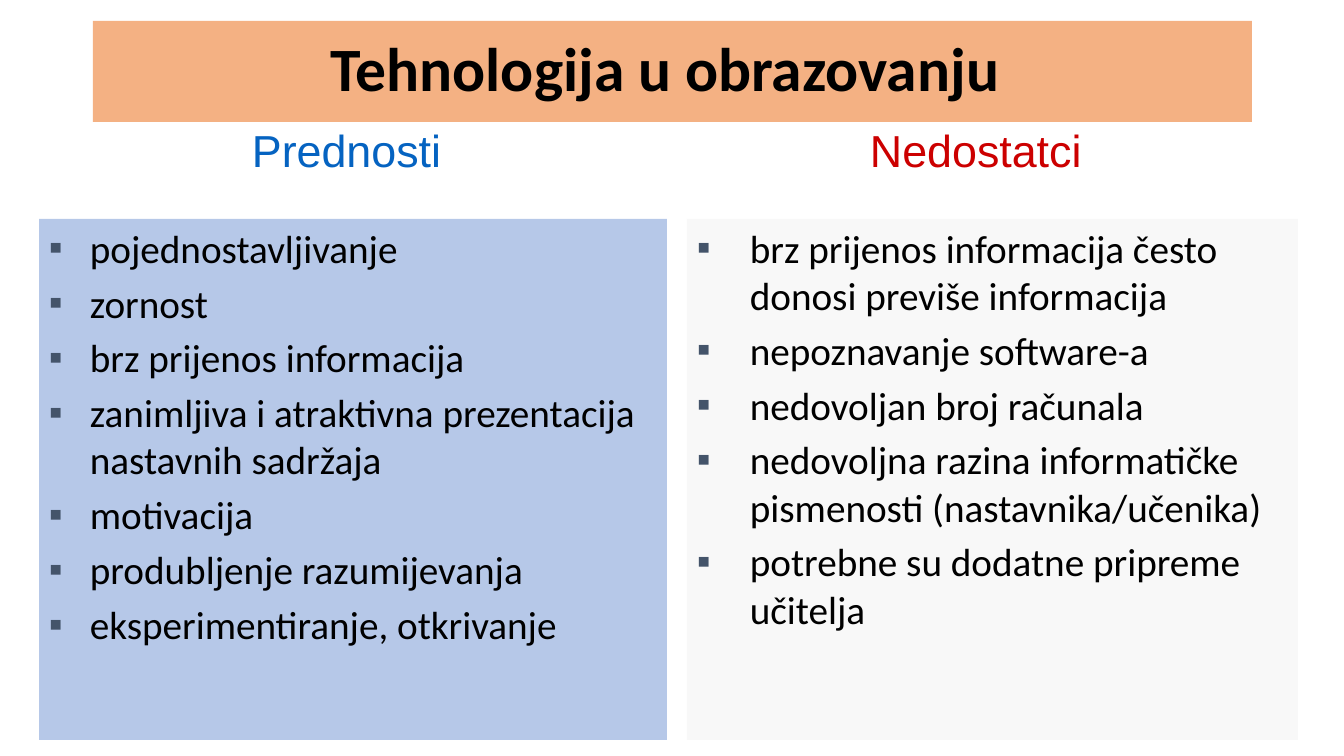
import pptx
import pptx.util
import pptx.dml.color
import pptx.enum.shapes
import pptx.enum.text
import pptx.oxml
import pptx.oxml.ns
import lxml.etree

RGB = pptx.dml.color.RGBColor
BLACK = RGB(0x00, 0x00, 0x00)
BLUE = RGB(0x44, 0x72, 0xC4)
PALE = RGB(0xF8, 0xF8, 0xF8)
PEACH = RGB(0xF4, 0xB1, 0x83)
LINK = RGB(0x05, 0x63, 0xC1)
RED = RGB(0xCC, 0x00, 0x00)
SLATE = RGB(0x44, 0x54, 0x6A)

# Content: boxes are left, top, width, height in px
TITLE = ("Tehnologija u obrazovanju ", (93, 21, 1159, 101))
SIDES = [
    dict(head="Prednosti", color=LINK, label=(242, 118, 213, 65),
         box=(39, 219, 628, 521), fill=BLUE, alpha=39, indent=41,
         items=["pojednostavljivanje",
                "zornost",
                "brz prijenos informacija",
                "zanimljiva i atraktivna prezentacija nastavnih sadržaja",
                "motivacija",
                "produbljenje razumijevanja",
                "eksperimentiranje, otkrivanje"]),
    dict(head="Nedostatci", color=RED, label=(860, 118, 268, 65),
         box=(687, 219, 611, 521), fill=PALE, alpha=100, indent=53,
         items=["brz prijenos informacija često donosi previše informacija",
                "nepoznavanje software-a",
                "nedovoljan broj računala",
                "nedovoljna razina informatičke pismenosti (nastavnika/učenika)",
                "potrebne su dodatne pripreme učitelja"]),
]
BODY = dict(name="Calibri", size=pptx.util.Pt(28), bold=False)
HEAD = dict(name="Arial", size=pptx.util.Pt(32), bold=False)
TOP = dict(name="Calibri", size=pptx.util.Pt(44), bold=True)
SCALE = 914400 / 100.8


def emu(px):
    return round(px * SCALE)


def place(shape, box):
    for side, px in zip(("left", "top", "width", "height"), box):
        setattr(shape, side, emu(px))


def write(para, text, style, color):
    run = para.add_run()
    run.text = text
    for key, value in style.items():
        setattr(run.font, key, value)
    run.font.color.rgb = color


def paint(shape, color, alpha=100):
    shape.fill.solid()
    shape.fill.fore_color.rgb = color
    if alpha < 100:
        tone = shape.fill._xPr.find(".//" + pptx.oxml.ns.qn("a:srgbClr"))
        lxml.etree.SubElement(tone, pptx.oxml.ns.qn("a:alpha"), val=str(alpha * 1000))


def bullet(para, indent):
    props = para._p.get_or_add_pPr()
    props.set("marL", str(emu(indent)))
    props.set("indent", str(-emu(indent)))
    color = lxml.etree.SubElement(props, pptx.oxml.ns.qn("a:buClr"))
    lxml.etree.SubElement(color, pptx.oxml.ns.qn("a:srgbClr"), val=str(SLATE))
    lxml.etree.SubElement(props, pptx.oxml.ns.qn("a:buFont"), typeface="Arial")
    lxml.etree.SubElement(props, pptx.oxml.ns.qn("a:buChar"), char="▪")


def main():
    deck = pptx.Presentation()
    deck.slide_width = emu(1344)
    deck.slide_height = emu(756)
    slide = deck.slides.add_slide(deck.slide_layouts[5])

    # Title bar
    text, box = TITLE
    title = slide.shapes.title
    place(title, box)
    paint(title, PEACH)
    title.text_frame.vertical_anchor = pptx.enum.text.MSO_ANCHOR.MIDDLE
    para = title.text_frame.paragraphs[0]
    para.alignment = pptx.enum.text.PP_ALIGN.CENTER
    para.line_spacing = 0.9
    write(para, text, TOP, BLACK)

    for side in SIDES:
        # List panel
        panel = slide.shapes.add_shape(
            pptx.enum.shapes.MSO_SHAPE.RECTANGLE, 0, 0, 0, 0)
        place(panel, side["box"])
        panel.shadow.inherit = False
        panel.line.fill.background()
        paint(panel, side["fill"], side["alpha"])
        frame = panel.text_frame
        frame.word_wrap = True
        frame.vertical_anchor = pptx.enum.text.MSO_ANCHOR.TOP
        for num, item in enumerate(side["items"]):
            para = frame.add_paragraph() if num else frame.paragraphs[0]
            para.alignment = pptx.enum.text.PP_ALIGN.LEFT
            para.space_before = pptx.util.Pt(5.6)
            bullet(para, side["indent"])
            write(para, item, BODY, BLACK)

        # Heading above the panel
        label = slide.shapes.add_textbox(0, 0, 0, 0)
        place(label, side["label"])
        label.text_frame.word_wrap = True
        write(label.text_frame.paragraphs[0], side["head"], HEAD, side["color"])

    deck.save("out.pptx")


if __name__ == "__main__":
    main()
